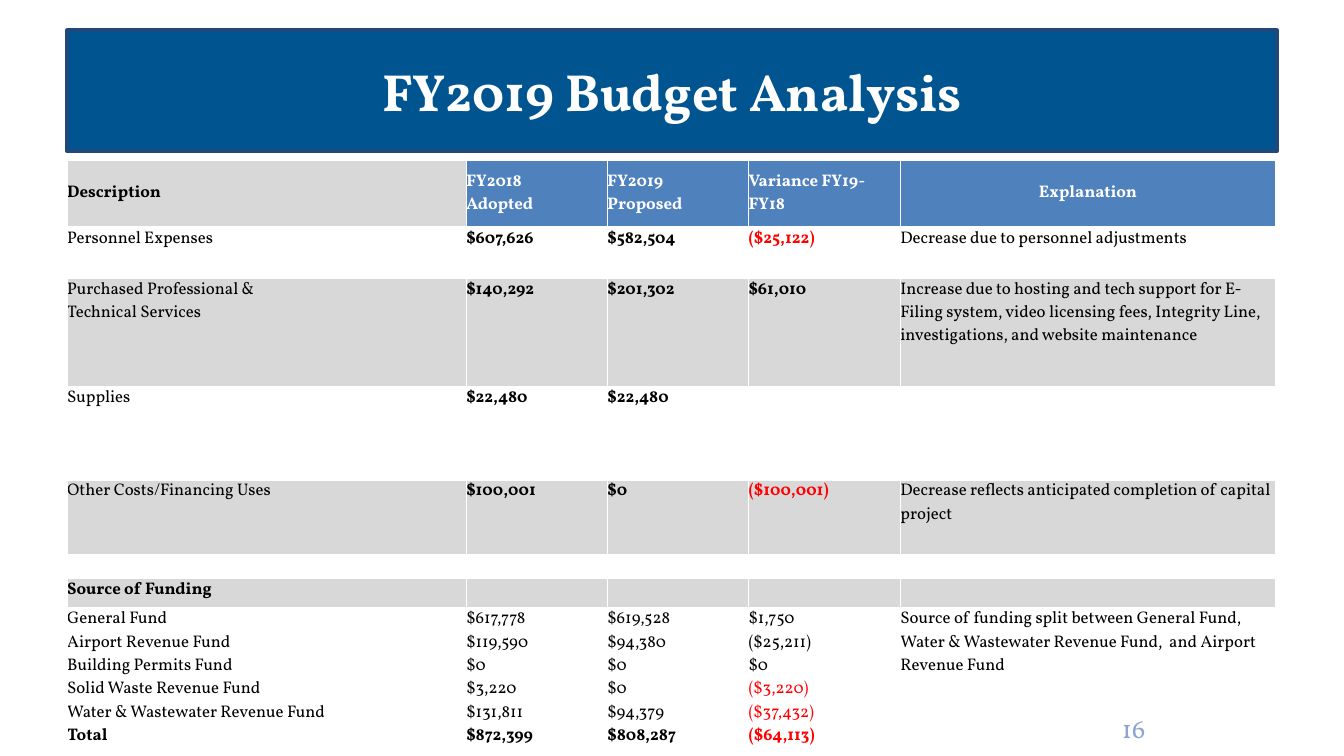
"""Build the FY2019 budget analysis slide with its table of costs and funding."""
from lxml import etree
from pptx import Presentation
from pptx import util as u
from pptx.dml.color import RGBColor
from pptx.enum import text
from pptx.oxml import ns

NAVY = RGBColor(0x00, 0x54, 0x90)
EDGE = RGBColor(0x1F, 0x49, 0x7D)
BLUE = RGBColor(0x4F, 0x81, 0xBD)
PALE = RGBColor(0x8C, 0xA4, 0xD2)
GREY = RGBColor(0xD8, 0xD8, 0xD8)
RED = RGBColor(0xFF, 0x00, 0x00)
WHITE = RGBColor(0xFF, 0xFF, 0xFF)
BLACK = RGBColor(0x00, 0x00, 0x00)
FACE = "Vollkorn"

COLS = [2.97, 1.05, 1.05, 1.13, 2.79]
ROWS = [
    (0.5, ["Description", "FY2018\vAdopted", "FY2019\vProposed", "Variance FY19-FY18", "Explanation"]),
    (0.38, ["Personnel Expenses", "$607,626", "$582,504", "($25,122)",
            "Decrease due to personnel adjustments"]),
    (0.81, ["Purchased Professional & \vTechnical Services", "$140,292", "$201,302", "$61,010",
            "Increase due to hosting and tech support for E-Filing system, video licensing fees, "
            "Integrity Line, investigations, and website maintenance"]),
    (0.69, ["Supplies", "$22,480", "$22,480", "", ""]),
    (0.56, ["Other Costs/Financing Uses", "$100,001", "$0", "($100,001)",
            "Decrease reflects anticipated completion of capital project"]),
    (0.15, [""] * 5),
    (0.22, ["Source of Funding", "", "", "", ""]),
    (0.17, ["General Fund", "$617,778", "$619,528", "$1,750",
            "Source of funding split between General Fund, Water & Wastewater Revenue Fund,  "
            "and Airport Revenue Fund"]),
    (0.17, ["Airport Revenue Fund", "$119,590", "$94,380", "($25,211)", ""]),
    (0.45, ["Building Permits Fund\nSolid Waste Revenue Fund\nWater & Wastewater Revenue Fund",
            "$0\v$3,220\v$131,811", "$0\v$0\v$94,379", "$0\v($3,220)\v($37,432)", ""]),
    (0.28, ["Total", "$872,399", "$808,287", "($64,113)", ""]),
]
HEAD, FUND, FIRST, TOTAL = 0, 6, 7, 10
SHADED = {HEAD, 2, 4, FUND}
PLAIN = "($25,211)"


def style(font, size, color, bold=False):
    font.name, font.size, font.bold = FACE, u.Pt(size), bold
    font.color.rgb = color


def border(cell):
    props = cell._tc.get_or_add_tcPr()
    for spot, side in enumerate(("lnL", "lnR", "lnT", "lnB")):
        line = etree.Element(ns.qn("a:" + side), w=str(u.Pt(1)))
        fill = etree.SubElement(line, ns.qn("a:solidFill"))
        etree.SubElement(fill, ns.qn("a:srgbClr"), val=str(WHITE))
        props.insert(spot, line)


deck = Presentation()
wide = u.Inches(10)
high = wide * 9 // 16
deck.slide_width, deck.slide_height = wide, high
slide = deck.slides.add_slide(deck.slide_layouts[5])
left = int(wide * 0.05)

title = slide.shapes.title
title.left, title.top = left, int(high * 0.04)
title.width, title.height = int(wide * 0.9), int(high * 0.16)
title.fill.solid()
title.fill.fore_color.rgb = NAVY
title.line.color.rgb, title.line.width = EDGE, u.Pt(2)
title.text_frame.text = "FY2019 Budget Analysis"
title.text_frame.vertical_anchor = text.MSO_ANCHOR.MIDDLE
para = title.text_frame.paragraphs[0]
para.alignment = text.PP_ALIGN.CENTER
style(para.font, 28, WHITE, True)

frame = slide.shapes.add_table(len(ROWS), len(COLS), left, u.Inches(1.19),
                               u.Inches(sum(COLS)), u.Inches(sum(tall for tall, _ in ROWS)))
table = frame.table
table.first_row = table.horz_banding = False
for col, span in zip(table.columns, COLS):
    col.width = u.Inches(span)

for r, (tall, words) in enumerate(ROWS):
    table.rows[r].height = u.Inches(tall)
    for c, word in enumerate(words):
        cell = table.cell(r, c)
        cell.margin_left = cell.margin_right = cell.margin_top = cell.margin_bottom = 0
        top = r == HEAD and c > 0
        cell.fill.solid()
        cell.fill.fore_color.rgb = BLUE if top else GREY if r in SHADED else WHITE
        border(cell)
        if r == HEAD:
            cell.vertical_anchor = text.MSO_ANCHOR.MIDDLE
        bold = r in (HEAD, FUND, TOTAL) or (r < FUND and 0 < c < 4)
        cell.text_frame.text = word
        for para in cell.text_frame.paragraphs:
            style(para.font, 9, WHITE if top else BLACK, bold)
            if top and c == 4:
                para.alignment = text.PP_ALIGN.CENTER
            for run in para.runs:
                if run.text.startswith("(") and run.text != PLAIN:
                    run.font.color.rgb = RED
table.cell(FIRST, 4).merge(table.cell(TOTAL, 4))

page = slide.shapes.add_textbox(int(wide * 0.825), u.Inches(5.25), u.Inches(1.24), u.Inches(0.3))
page.text_frame.word_wrap = True
page.text_frame.text = "16"
style(page.text_frame.paragraphs[0].font, 14, PALE)

deck.save("out.pptx")
